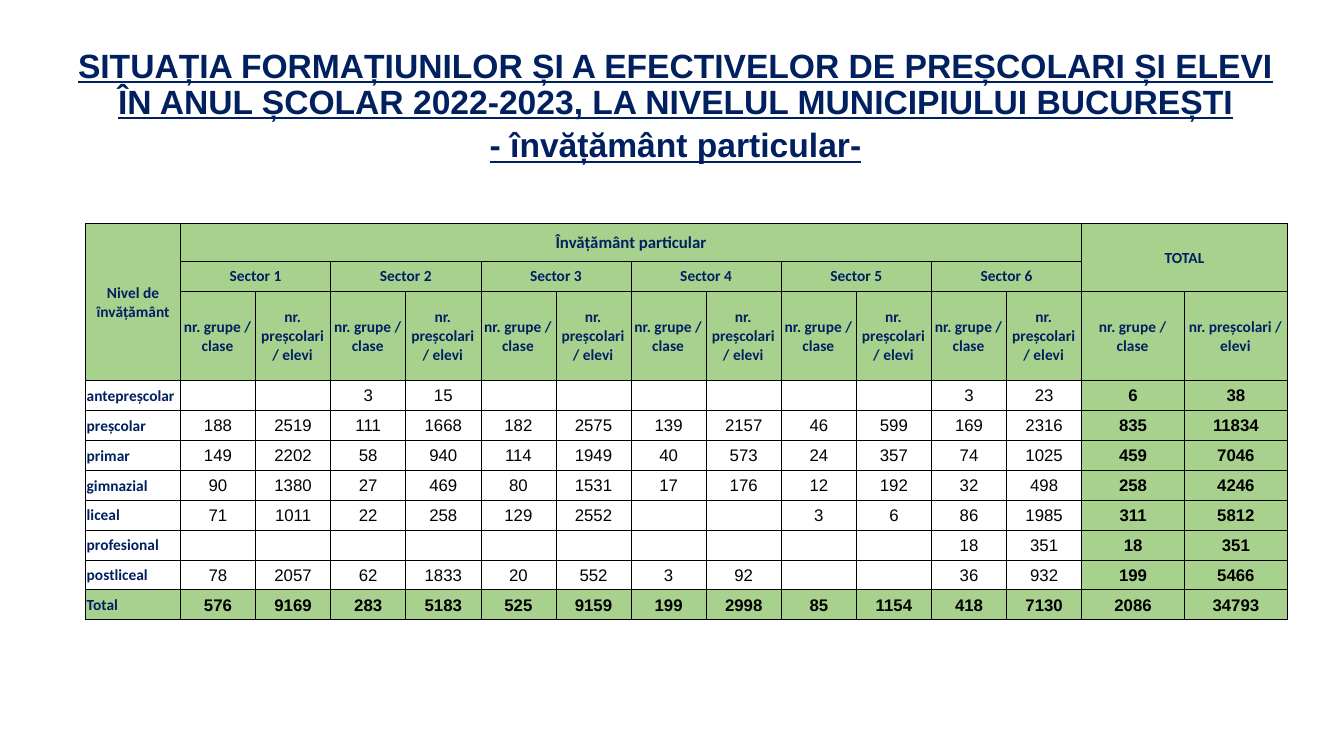
import dataclasses

import pptx
import pptx.dml.color
import pptx.enum.text
import pptx.util
from lxml import etree
from pptx.oxml.ns import qn

Inches = pptx.util.Inches
Pt = pptx.util.Pt
RGB = pptx.dml.color.RGBColor.from_string
ALIGN = pptx.enum.text.PP_ALIGN
MIDDLE = pptx.enum.text.MSO_ANCHOR.MIDDLE


@dataclasses.dataclass(frozen=True)
class Theme:
    navy: str = "002060"
    green: str = "A9D18E"
    white: str = "FFFFFF"
    black: str = "000000"
    title_font: str = "Arial"
    label_font: str = "Calibri"
    number_font: str = "Arial"
    title_size: int = 24
    label_size: int = 11
    number_size: int = 12
    border: float = 0.5


THEME = Theme()

TITLE = [
    "SITUAȚIA FORMAȚIUNILOR ȘI A EFECTIVELOR DE PREȘCOLARI ȘI ELEVI "
    "ÎN ANUL ȘCOLAR 2022-2023, LA NIVELUL MUNICIPIULUI BUCUREȘTI",
    "- învățământ particular-",
]
SECTORS = 6
MEASURES = ["nr. grupe / clase", "nr. preșcolari / elevi"]
# Groups and pupils for each sector, then the two totals
LEVELS = {
    "antepreșcolar": ["", "", 3, 15, "", "", "", "", "", "", 3, 23, 6, 38],
    "preșcolar": [188, 2519, 111, 1668, 182, 2575, 139, 2157, 46, 599, 169, 2316, 835, 11834],
    "primar": [149, 2202, 58, 940, 114, 1949, 40, 573, 24, 357, 74, 1025, 459, 7046],
    "gimnazial": [90, 1380, 27, 469, 80, 1531, 17, 176, 12, 192, 32, 498, 258, 4246],
    "liceal": [71, 1011, 22, 258, 129, 2552, "", "", 3, 6, 86, 1985, 311, 5812],
    "profesional": ["", "", "", "", "", "", "", "", "", "", 18, 351, 18, 351],
    "postliceal": [78, 2057, 62, 1833, 20, 552, 3, 92, "", "", 36, 932, 199, 5466],
    "Total": [576, 9169, 283, 5183, 525, 9159, 199, 2998, 85, 1154, 418, 7130, 2086, 34793],
}
HEADER_ROWS = 3
TOTAL_COL = 1 + 2 * SECTORS


def set_font(p, name, size, color, bold=True):
    p.font.name, p.font.size, p.font.bold = name, Pt(size), bold
    p.font.color.rgb = RGB(color)


def add_table(slide, left, top, col_widths, row_heights):
    frame = slide.shapes.add_table(
        len(row_heights), len(col_widths), Inches(left), Inches(top),
        Inches(sum(col_widths)), Inches(sum(row_heights)))
    table = frame.table
    table.first_row = table.horz_banding = False
    for col, width in zip(table.columns, col_widths):
        col.width = Inches(width)
    for row, height in zip(table.rows, row_heights):
        row.height = Inches(height)
    return table


def add_borders(cell, color):
    tc_pr = cell._tc.get_or_add_tcPr()
    for side in ("a:lnL", "a:lnR", "a:lnT", "a:lnB"):
        ln = etree.SubElement(tc_pr, qn(side), w=str(Pt(THEME.border)))
        if color is None:
            etree.SubElement(ln, qn("a:noFill"))
        else:
            fill = etree.SubElement(ln, qn("a:solidFill"))
            etree.SubElement(fill, qn("a:srgbClr"), val=color)


def style_cell(cell, fill=None, border=None):
    add_borders(cell, border)
    if fill is None:
        cell.fill.background()
    else:
        cell.fill.solid()
        cell.fill.fore_color.rgb = RGB(fill)
    cell.vertical_anchor = MIDDLE
    cell.margin_left = cell.margin_top = cell.margin_right = Inches(0.01)
    cell.margin_bottom = 0


def add_title_table(slide):
    table = add_table(slide, 0.74, 0.43, [11.92], [0.83, 0.39])
    for r, line in enumerate(TITLE):
        cell = table.cell(r, 0)
        style_cell(cell)
        cell.text = line
        p = cell.text_frame.paragraphs[0]
        p.alignment = ALIGN.CENTER
        p.line_spacing = 0.96
        set_font(p, THEME.title_font, THEME.title_size, THEME.navy)
        p.font.underline = True


def write_label(cell, text, size=THEME.label_size, align=ALIGN.CENTER):
    cell.text = text
    p = cell.text_frame.paragraphs[0]
    p.alignment = align
    set_font(p, THEME.label_font, size, THEME.navy)


def write_number(cell, value, bold):
    cell.text = str(value)
    p = cell.text_frame.paragraphs[0]
    p.alignment = ALIGN.CENTER
    set_font(p, THEME.number_font, THEME.number_size, THEME.black, bold)
    if value == "":
        # Keeps an empty cell from stretching its row
        etree.SubElement(p._p, qn("a:endParaRPr"), sz=str(THEME.number_size * 100))


def add_enrolment_grid(slide):
    # Sector columns and plain rows share the space left equally
    width, height = 11.92, 3.93
    level_w, total_w = 0.94, 1.02
    sector_w = (width - level_w - 2 * total_w) / (2 * SECTORS)
    top_h, measure_h = 0.37, 0.89
    row_h = (height - top_h - measure_h) / (1 + len(LEVELS))
    return add_table(
        slide, 0.85, 2.22,
        [level_w] + [sector_w] * 2 * SECTORS + [total_w] * 2,
        [top_h, row_h, measure_h] + [row_h] * len(LEVELS))


def fill_header(table):
    last = TOTAL_COL + 1
    table.cell(0, 0).merge(table.cell(2, 0))
    table.cell(0, 1).merge(table.cell(0, TOTAL_COL - 1))
    table.cell(0, TOTAL_COL).merge(table.cell(1, last))
    write_label(table.cell(0, 0), "Nivel de învățământ")
    write_label(table.cell(0, 1), "Învățământ particular", size=12)
    write_label(table.cell(0, TOTAL_COL), "TOTAL")
    for sector in range(SECTORS):
        col = 1 + 2 * sector
        table.cell(1, col).merge(table.cell(1, col + 1))
        write_label(table.cell(1, col), f"Sector {sector + 1}")
    for col in range(1, last + 1):
        cell = table.cell(2, col)
        write_label(cell, MEASURES[(col - 1) % 2])
        cell.margin_right = Inches(0.02)


def fill_levels(table):
    for r, (level, values) in enumerate(LEVELS.items(), HEADER_ROWS):
        write_label(table.cell(r, 0), level, align=ALIGN.LEFT)
        for c, value in enumerate(values, 1):
            write_number(table.cell(r, c), value, level == "Total" or c >= TOTAL_COL)


def add_enrolment_table(slide):
    table = add_enrolment_grid(slide)
    rows, cols = len(table.rows), len(table.columns)
    for r in range(rows):
        for c in range(cols):
            shaded = r < HEADER_ROWS or r == rows - 1 or c >= TOTAL_COL
            style_cell(table.cell(r, c), THEME.green if shaded else THEME.white, THEME.black)
    fill_header(table)
    fill_levels(table)


def main():
    prs = pptx.Presentation()
    prs.slide_width, prs.slide_height = Inches(13.33), Inches(7.5)
    slide = prs.slides.add_slide(prs.slide_layouts[6])
    add_title_table(slide)
    add_enrolment_table(slide)
    prs.save("out.pptx")


if __name__ == "__main__":
    main()
